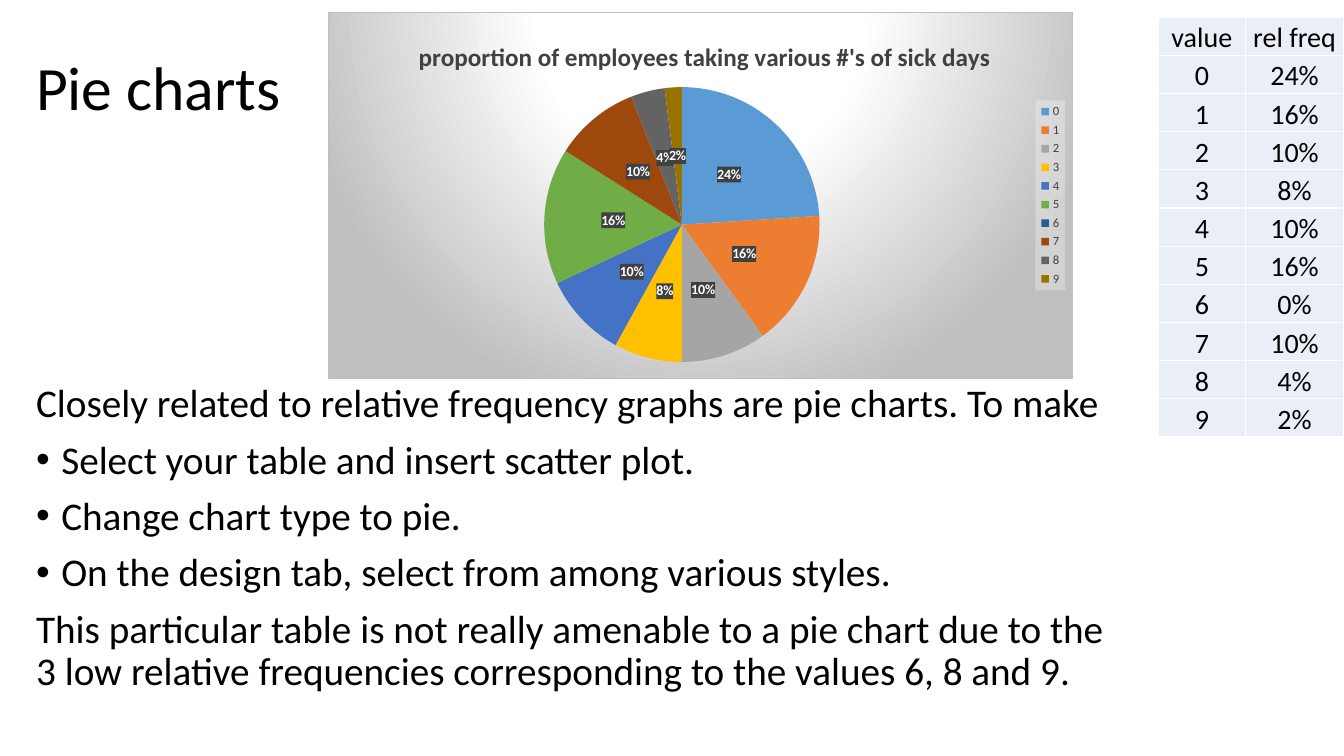
from lxml import etree
from pptx import Presentation
from pptx import util as u
from pptx.chart import data as chart_data
from pptx.dml.color import RGBColor
from pptx.enum import chart as kinds, text
from pptx.oxml import parse_xml
from pptx.oxml.ns import nsdecls, qn

Pt = u.Pt
FONT = "Calibri"
BLACK = RGBColor(0x00, 0x00, 0x00)
WHITE = RGBColor(0xFF, 0xFF, 0xFF)
CHARCOAL = RGBColor(0x40, 0x40, 0x40)
SILVER = RGBColor(0xBF, 0xBF, 0xBF)
MIST = RGBColor(0xF2, 0xF2, 0xF2)
PALE_BLUE = RGBColor(0xEA, 0xEF, 0xF7)
SLICES = [RGBColor.from_string(code) for code in (
    "5B9BD5", "ED7D31", "A5A5A5", "FFC000", "4472C4",
    "70AD47", "255E91", "9E480E", "636363", "997300")]
SICK_DAYS = [24, 16, 10, 8, 10, 16, 0, 10, 4, 2]
TITLE = "Pie charts"
CHART_TITLE = "proportion of employees taking various #'s of sick days"
BODY = [
    ("Closely related to relative frequency graphs are pie charts. To make", False),
    ("Select your table and insert scatter plot.", True),
    ("Change chart type to pie.", True),
    ("On the design tab, select from among various styles.", True),
    ("This particular table is not really amenable to a pie chart due to the "
     "3 low relative frequencies corresponding to the values 6, 8 and 9.", False),
]


def style_font(font, size, color=BLACK, bold=False):
    font.name = FONT
    font.size = Pt(size)
    font.bold = bold
    font.color.rgb = color


def write(para, words, size, bullet=False, before=0, spacing=None, align=None):
    if bullet:
        props = para._p.get_or_add_pPr()
        props.set("marL", str(Pt(18)))
        props.set("indent", str(-Pt(18)))
        etree.SubElement(props, qn("a:buFont"), typeface="Arial")
        etree.SubElement(props, qn("a:buChar"), char="•")
    para.space_before = Pt(before)
    para.line_spacing = spacing
    para.alignment = align
    span = para.add_run()
    span.text = words
    style_font(span.font, size)


def add_text(page, left, top, width, height, lines, size, anchor):
    box = page.shapes.add_textbox(Pt(left), Pt(top), Pt(width), Pt(height))
    frame = box.text_frame
    frame.word_wrap = True
    frame.vertical_anchor = anchor
    for index, (words, bullet) in enumerate(lines):
        para = frame.add_paragraph() if index else frame.paragraphs[0]
        write(para, words, size, bullet=bullet, before=10 if index else 0, spacing=0.9)


def add_frequency_table(page, left, top, width, height):
    rows = [("value", "rel freq")]
    rows += [(str(day), f"{share}%") for day, share in enumerate(SICK_DAYS)]
    table = page.shapes.add_table(
        len(rows), 2, Pt(left), Pt(top), Pt(width), Pt(height)).table
    table.first_row = False
    table.horz_banding = False
    table.columns[0].width = Pt(62)
    table.columns[1].width = Pt(width - 62)
    for row, values in enumerate(rows):
        table.rows[row].height = Pt(height / len(rows))
        for column, words in enumerate(values):
            cell = table.cell(row, column)
            cell.margin_left = cell.margin_right = cell.margin_top = Pt(0.7)
            cell.margin_bottom = 0
            cell.vertical_anchor = text.MSO_ANCHOR.BOTTOM
            write(cell.text_frame.paragraphs[0], words, 20, align=text.PP_ALIGN.CENTER)
            for side in ("lnL", "lnR", "lnT", "lnB"):
                cell._tc.get_or_add_tcPr().append(parse_xml(
                    f'<a:{side} {nsdecls("a")} w="{Pt(1)}"><a:solidFill>'
                    f'<a:srgbClr val="{WHITE}"/></a:solidFill></a:{side}>'))
            cell.fill.solid()
            cell.fill.fore_color.rgb = PALE_BLUE


def paint(part, content):
    part.find(qn("c:txPr")).addprevious(
        parse_xml(f'<c:spPr {nsdecls("c", "a")}>{content}</c:spPr>'))


def veil(color, alpha):
    return (f'<a:solidFill><a:srgbClr val="{color}"><a:alpha val="{alpha * 1000}"/>'
            '</a:srgbClr></a:solidFill>')


def place(part, position, **layout):
    for old in part.findall(qn("c:layout")):
        part.remove(old)
    modes = "".join(f'<c:{axis}Mode val="edge"/>' for axis in "xy")
    values = "".join(f'<c:{key} val="{value}"/>' for key, value in layout.items())
    target = '<c:layoutTarget val="inner"/>' if part.tag == qn("c:plotArea") else ""
    part.insert(position, parse_xml(
        f'<c:layout {nsdecls("c")}><c:manualLayout>{target}{modes}{values}'
        '</c:manualLayout></c:layout>'))


def add_pie(page, left, top, width, height):
    data = chart_data.CategoryChartData()
    data.categories = [str(day) for day in range(len(SICK_DAYS))]
    data.add_series("Series 1", SICK_DAYS)
    chart = page.shapes.add_chart(
        kinds.XL_CHART_TYPE.PIE, Pt(left), Pt(top), Pt(width), Pt(height), data).chart
    style_font(chart.font, 10)
    stops = "".join(f'<a:gs pos="{stop * 1000}"><a:srgbClr val="{color}"/></a:gs>'
                    for stop, color in ((0, WHITE), (39, WHITE), (100, SILVER)))
    paint(chart._chartSpace,
          f'<a:gradFill><a:gsLst>{stops}</a:gsLst><a:path path="circle">'
          '<a:fillToRect l="50000" t="-80000" r="50000" b="180000"/></a:path></a:gradFill>'
          f'<a:ln w="{Pt(0.75)}"><a:solidFill><a:srgbClr val="{SILVER}"/></a:solidFill></a:ln>')

    title = chart.chart_title
    span = title.text_frame.paragraphs[0].add_run()
    span.text = CHART_TITLE
    style_font(span.font, 18, CHARCOAL, bold=True)
    place(title._element, 1, x=0.115, y=0.06)

    chart.has_legend = True
    legend = chart.legend
    legend.position = kinds.XL_LEGEND_POSITION.RIGHT
    legend.include_in_layout = False
    style_font(legend.font, 9, CHARCOAL)
    paint(legend._element, veil(MIST, 39))
    place(legend._element, 1, x=0.95, y=0.24, w=0.04, h=0.52)

    plot = chart.plots[0]
    plot.vary_by_categories = True
    place(chart._chartSpace.chart.plotArea, 0, x=0.29, y=0.2, w=0.37, h=0.76)
    series = plot.series[0]
    for index, color in enumerate(SLICES):
        fill = series.points[index].format.fill
        fill.solid()
        fill.fore_color.rgb = color
    labels = series.data_labels
    labels.show_percentage = True
    labels.show_value = False
    labels.number_format = "0%"
    labels.number_format_is_linked = False
    labels.position = kinds.XL_LABEL_POSITION.CENTER
    style_font(labels.font, 10, WHITE, bold=True)
    paint(labels._element, veil(CHARCOAL, 90))
    labels._element.insert(0, parse_xml(
        f'<c:dLbl {nsdecls("c")}><c:idx val="{SICK_DAYS.index(0)}"/>'
        '<c:delete val="1"/></c:dLbl>'))


def main():
    deck = Presentation()
    deck.slide_width, deck.slide_height = Pt(960), Pt(540)
    page = deck.slides.add_slide(deck.slide_layouts[6])
    add_text(page, 18.7, 12.2, 211.7, 104.4, [(TITLE, False)], 44, text.MSO_ANCHOR.MIDDLE)
    add_text(page, 18.7, 270.7, 791.3, 269.3, BODY, 28, text.MSO_ANCHOR.TOP)
    add_frequency_table(page, 827.5, 12.2, 132.5, 300.2)
    add_pie(page, 234.2, 8.6, 532.4, 262)
    deck.save("out.pptx")


if __name__ == "__main__":
    main()
